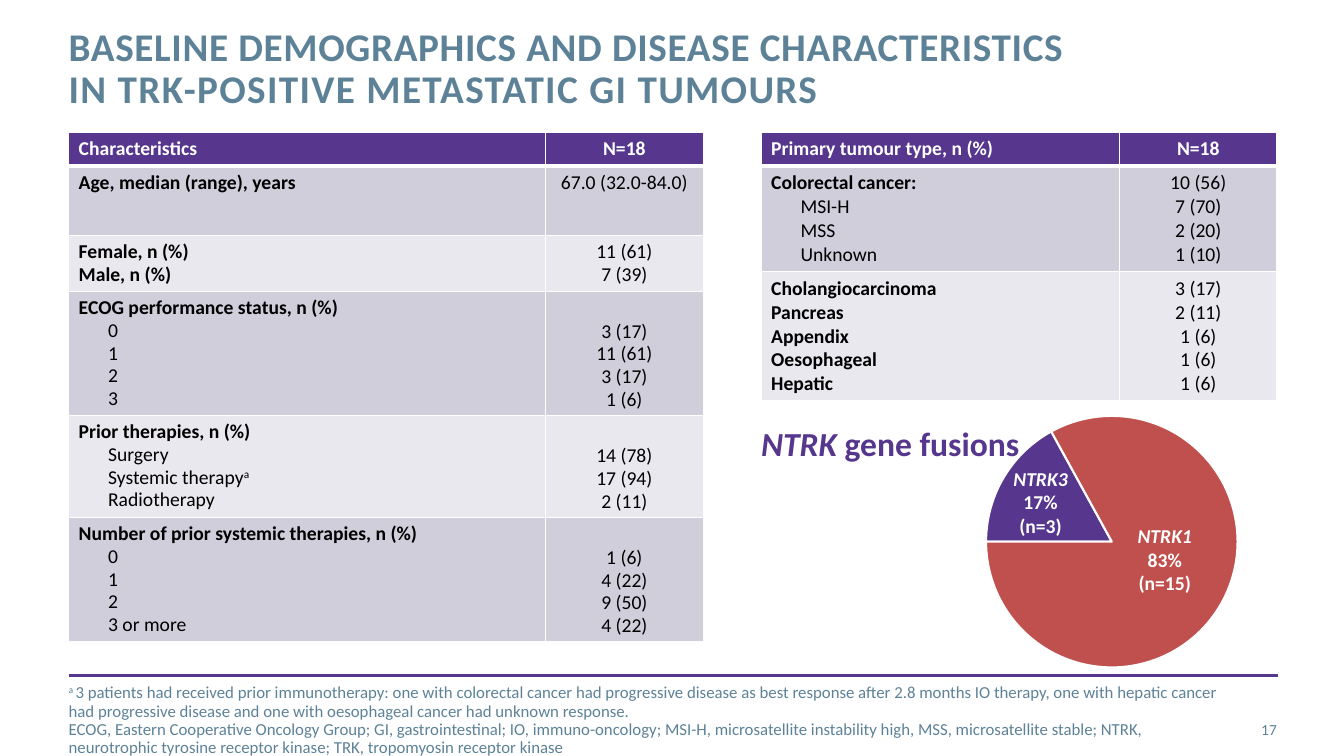
from dataclasses import dataclass
from typing import Optional, Sequence

from lxml.etree import SubElement
from pptx import Presentation
from pptx.chart.data import CategoryChartData
from pptx.dml.color import RGBColor
from pptx.enum.chart import XL_CHART_TYPE
from pptx.enum.shapes import MSO_CONNECTOR
from pptx.enum.text import MSO_ANCHOR, MSO_AUTO_SIZE, PP_ALIGN
from pptx.oxml import parse_xml
from pptx.oxml.ns import nsdecls, qn
from pptx.util import Cm, Pt

PURPLE, RED, SLATE = "56378D", "C0504D", "5D8298"
WHITE, BLACK = "FFFFFF", "000000"
BANDS = ("D1CEDB", "E9E8EE")
LEFT, RIGHT_COLUMN, TABLE_TOP = 1.73, 19.18, 3.33


@dataclass
class Span:
    text: str
    bold: bool = False
    italic: bool = False
    raised: bool = False
    spacing: float = 0


@dataclass
class Line:
    spans: Sequence[Span]
    indent: float = 0


@dataclass
class Style:
    size: float = 14
    color: str = BLACK
    align: PP_ALIGN = PP_ALIGN.LEFT
    line_spacing: object = 1.0


@dataclass
class Row:
    height: float
    headings: Sequence[str]
    values: Sequence[str]
    nested: Sequence[Line] = ()


@dataclass
class DataTable:
    left: float
    widths: Sequence[float]
    line_spacing: float
    heading: str
    rows: Sequence[Row]


@dataclass
class Label:
    left: float
    top: float
    width: float
    height: float
    lines: Sequence[Line]
    style: Style
    left_inset: Optional[float] = None


def rgb(color: str) -> RGBColor:
    return RGBColor.from_string(color)


def plain(*texts: str, bold: bool = False, indent: float = 0) -> list[Line]:
    return [Line([Span(text, bold)], indent) for text in texts]


def write(frame, lines: Sequence[Line], style: Style) -> None:
    for index, line in enumerate(lines):
        para = frame.paragraphs[0] if index == 0 else frame.add_paragraph()
        properties = para._p.get_or_add_pPr()
        properties.set("marL", str(Cm(line.indent)))
        properties.set("indent", "0")
        SubElement(properties, qn("a:buNone"))
        para.alignment = style.align
        para.line_spacing = style.line_spacing
        para.space_before = para.space_after = Pt(0)
        for span in line.spans:
            run = para.add_run()
            run.text = span.text
            font = run.font
            font.name, font.size = "Calibri", Pt(style.size)
            font.bold, font.italic = span.bold, span.italic
            font.color.rgb = rgb(style.color)
            if span.raised:
                run._r.get_or_add_rPr().set("baseline", "30000")
            if span.spacing:
                run._r.get_or_add_rPr().set("spc", str(int(span.spacing * 100)))


def place(shape, left: float, top: float, width: float, height: float) -> None:
    shape.left, shape.top, shape.width, shape.height = map(Cm, (left, top, width, height))


def clear_insets(frame) -> None:
    frame.margin_left = frame.margin_right = frame.margin_top = frame.margin_bottom = 0
    frame.auto_size = MSO_AUTO_SIZE.NONE
    frame.word_wrap = True


def paint_cell(cell, row: int, fill: str) -> None:
    properties = cell._tc.get_or_add_tcPr()
    heavy_side = {0: "B", 1: "T"}.get(row)
    for side in "LRTB":
        width = Pt(3 if side == heavy_side else 1)
        properties.append(parse_xml(
            f'<a:ln{side} {nsdecls("a")} w="{width}"><a:solidFill>'
            f'<a:srgbClr val="{WHITE}"/></a:solidFill></a:ln{side}>'))
    cell.fill.solid()
    cell.fill.fore_color.rgb = rgb(fill)


def draw_table(page, spec_table: DataTable) -> None:
    rows = [Row(0.84, [spec_table.heading], ["N=18"]), *spec_table.rows]
    table = page.shapes.add_table(
        len(rows), 2, Cm(spec_table.left), Cm(TABLE_TOP),
        Cm(sum(spec_table.widths)), Cm(sum(row.height for row in rows))).table
    table.horz_banding = False
    for column, width in zip(table.columns, spec_table.widths):
        column.width = Cm(width)
    for index, row in enumerate(rows):
        table.rows[index].height = Cm(row.height)
        header = index == 0
        labels = [*plain(*row.headings, bold=True), *row.nested]
        values = plain(*row.values, bold=header)
        for column, lines in enumerate((labels, values)):
            cell = table.cell(index, column)
            paint_cell(cell, index, PURPLE if header else BANDS[(index - 1) % 2])
            write(cell.text_frame, lines, Style(
                color=WHITE if header else BLACK,
                align=PP_ALIGN.CENTER if column else PP_ALIGN.LEFT,
                line_spacing=1.0 if header else spec_table.line_spacing))
        # Values line up with the nested labels below an unvalued heading
        if row.nested and len(values) < len(labels):
            table.cell(index, 1).vertical_anchor = MSO_ANCHOR.BOTTOM


def draw_label(page, label: Label) -> None:
    box = page.shapes.add_textbox(0, 0, 0, 0)
    place(box, label.left, label.top, label.width, label.height)
    box.text_frame.word_wrap = False
    if label.left_inset is not None:
        box.text_frame.margin_left = Cm(label.left_inset)
    write(box.text_frame, label.lines, label.style)


def draw_pie(page) -> None:
    data = CategoryChartData()
    data.categories = ["1", "2", "3"]
    data.add_series("Series 1", (17, 83, 0))
    chart = page.shapes.add_chart(
        XL_CHART_TYPE.PIE, Cm(23.93), Cm(10.13), Cm(8.18), Cm(7.04), data).chart
    chart.has_legend = chart.has_title = False
    chart.font.name, chart.font.size = "Calibri", Pt(10)
    chart.font.color.rgb = rgb(BLACK)
    plot = chart.plots[0]
    plot.vary_by_categories = True
    for index, color in enumerate((PURPLE, RED, SLATE)):
        slice_format = plot.series[0].points[index].format
        slice_format.fill.solid()
        slice_format.fill.fore_color.rgb = rgb(color)
        slice_format.line.color.rgb = rgb(WHITE)
        slice_format.line.width = Pt(1.5)
    pie = plot._element
    angle = pie.find(qn("c:firstSliceAng"))
    if angle is None:
        angle = SubElement(pie, qn("c:firstSliceAng"))
    angle.set("val", "270")


CHARACTERISTICS = DataTable(LEFT, (12.01, 3.99), 0.95, "Characteristics", [
    Row(1.75, ["Age, median (range), years"], ["67.0 (32.0-84.0)"]),
    Row(1.41, ["Female, n (%)", "Male, n (%)"], ["11 (61)", "7 (39)"]),
    Row(3.13, ["ECOG performance status, n (%)"], ["3 (17)", "11 (61)", "3 (17)", "1 (6)"],
        plain("0", "1", "2", "3", indent=0.74)),
    Row(2.57, ["Prior therapies, n (%)"], ["14 (78)", "17 (94)", "2 (11)"],
        [*plain("Surgery", indent=0.74),
         Line([Span("Systemic therapy"), Span("a", raised=True)], 0.74),
         *plain("Radiotherapy", indent=0.74)]),
    Row(3.13, ["Number of prior systemic therapies, n (%)"],
        ["1 (6)", "4 (22)", "9 (50)", "4 (22)"],
        plain("0", "1", "2", "3 or more", indent=0.74)),
])
TUMOUR_TYPES = DataTable(RIGHT_COLUMN, (9.04, 3.96), 1.0, "Primary tumour type, n (%)", [
    Row(2.6, ["Colorectal cancer:"], ["10 (56)", "7 (70)", "2 (20)", "1 (10)"],
        plain("MSI-H", "MSS", "Unknown", indent=0.74)),
    Row(3.2, ["Cholangiocarcinoma", "Pancreas", "Appendix", "Oesophageal", "Hepatic"],
        ["3 (17)", "2 (11)", "1 (6)", "1 (6)", "1 (6)"]),
])
SLICE_STYLE = Style(color=WHITE, align=PP_ALIGN.CENTER)
FUSION_HEADING = Label(RIGHT_COLUMN, 10.52, 7.09, 1.27, [
    Line([Span("NTRK", True, True), Span(" gene fusions", True)])], Style(24, PURPLE), 0)
SLICE_LABELS = [
    Label(left, top, 1.91, 2.06,
          [Line([Span(gene, True, True)]), *plain(share, count, bold=True)], SLICE_STYLE)
    for left, top, gene, share, count in (
        (25.27, 11.63, "NTRK3", "17%", "(n=3)"), (28.4, 13.08, "NTRK1", "83%", "(n=15)"))]
FOOTNOTES = [
    Line([Span("a ", raised=True), Span(
        "3 patients had received prior immunotherapy: one with colorectal cancer had progressive "
        "disease as best response after 2.8 months IO therapy, one with hepatic cancer had "
        "progressive disease and one with oesophageal cancer had unknown response.")]),
    *plain("ECOG, Eastern Cooperative Oncology Group; GI, gastrointestinal; IO, immuno-oncology; "
           "MSI-H, microsatellite instability high, MSS, microsatellite stable; NTRK, "
           "neurotrophic tyrosine receptor kinase; TRK, tropomyosin receptor kinase")]


def main() -> None:
    deck = Presentation()
    deck.slide_width, deck.slide_height = Cm(33.87), Cm(19.05)
    page = deck.slides.add_slide(deck.slide_layouts[1])

    # Title and footnotes
    title, notes = page.shapes.title, page.placeholders[1]
    place(title, LEFT, 0.69, 26.21, 2.24)
    place(notes, LEFT, 17.65, 29.01, 1.02)
    for holder, anchor in ((title, MSO_ANCHOR.TOP), (notes, MSO_ANCHOR.MIDDLE)):
        clear_insets(holder.text_frame)
        holder.text_frame.vertical_anchor = anchor
    write(title.text_frame, [Line([
        Span("BASELINE DEMOGRAPHICS AND DISEASE CHARACTERISTICS ", True, spacing=0.5),
        Span("IN TRK-POSITIVE METASTATIC GI TUMOURS", True, spacing=1)])],
        Style(28, SLATE, line_spacing=Pt(30)))
    write(notes.text_frame, FOOTNOTES, Style(12, SLATE, line_spacing=0.9))

    # Rule and page number
    rule = page.shapes.add_connector(
        MSO_CONNECTOR.STRAIGHT, Cm(LEFT), Cm(17.02), Cm(32.21), Cm(17.02))
    rule.line.color.rgb, rule.line.width = rgb(PURPLE), Pt(2)
    SubElement(rule._element.spPr, qn("a:effectLst"))
    number = page.shapes.add_textbox(Cm(30), Cm(17.86), Cm(2.18), Cm(1.02))
    clear_insets(number.text_frame)
    number.text_frame.vertical_anchor = MSO_ANCHOR.MIDDLE
    write(number.text_frame, plain("17"), Style(11, SLATE, PP_ALIGN.RIGHT))

    # Tables, then the pie with its labels
    for table in (CHARACTERISTICS, TUMOUR_TYPES):
        draw_table(page, table)
    draw_label(page, FUSION_HEADING)
    draw_pie(page)
    for label in SLICE_LABELS:
        draw_label(page, label)

    deck.save("out.pptx")


if __name__ == "__main__":
    main()
